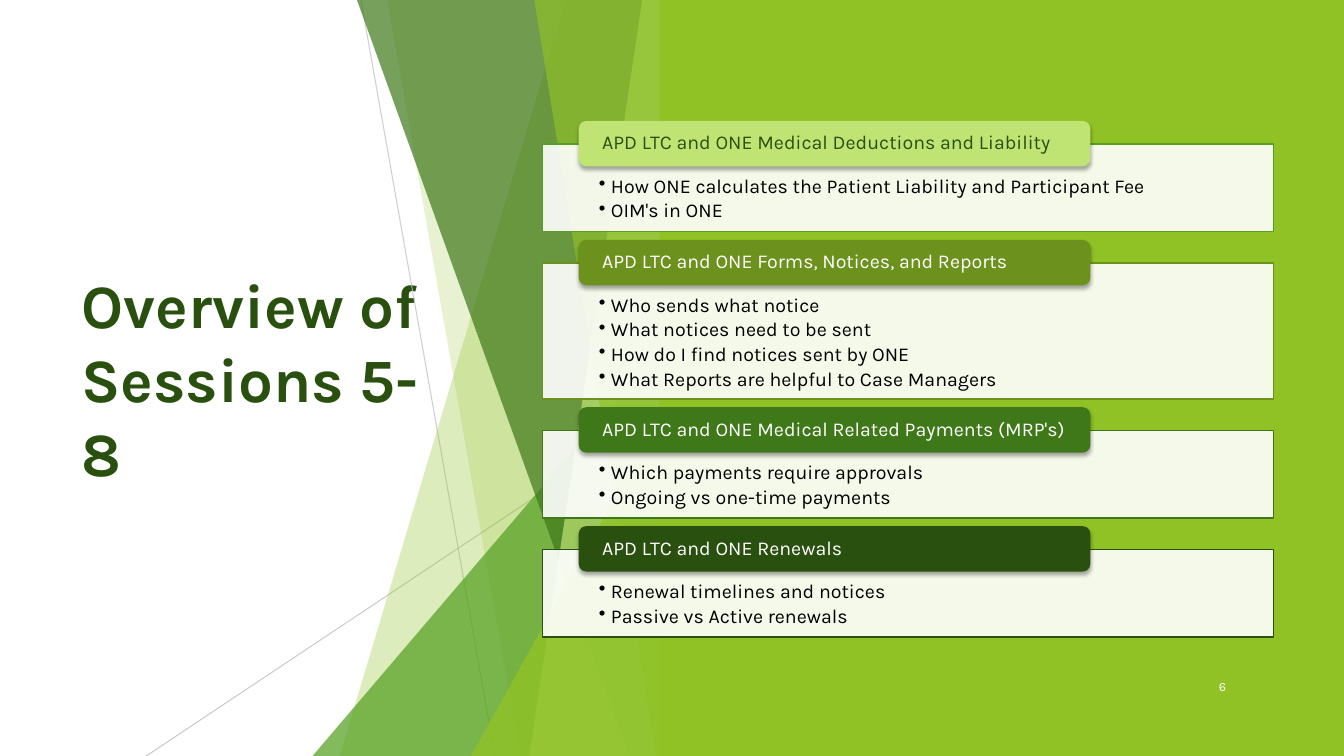
from lxml import etree
from pptx import Presentation
from pptx.dml.color import RGBColor
from pptx.enum.shapes import MSO_CONNECTOR, MSO_SHAPE
from pptx.enum.text import MSO_ANCHOR, PP_ALIGN
from pptx.oxml.ns import qn
from pptx.util import Inches, Pt

FONT = "Karla"
WHITE = RGBColor(0xFF, 0xFF, 0xFF)
BLACK = RGBColor(0x00, 0x00, 0x00)
GRAY = RGBColor(0xBF, 0xBF, 0xBF)
LIME = RGBColor(0x90, 0xC2, 0x26)
PALE_LIME = RGBColor(0xC0, 0xE4, 0x74)
OLIVE = RGBColor(0x6C, 0x92, 0x1D)
GREEN = RGBColor(0x54, 0xA0, 0x21)
FOREST = RGBColor(0x3F, 0x78, 0x19)
DARK_GREEN = RGBColor(0x2A, 0x50, 0x10)

SESSIONS = [
    ("APD LTC and ONE Medical Deductions and Liability", PALE_LIME, GREEN, DARK_GREEN,
     ["How ONE calculates the Patient Liability and Participant Fee", "OIM's in ONE"]),
    ("APD LTC and ONE Forms, Notices, and Reports", OLIVE, OLIVE, WHITE,
     ["Who sends what notice", "What notices need to be sent",
      "How do I find notices sent by ONE", "What Reports are helpful to Case Managers"]),
    ("APD LTC and ONE Medical Related Payments (MRP's)", FOREST, FOREST, WHITE,
     ["Which payments require approvals", "Ongoing vs one-time payments"]),
    ("APD LTC and ONE Renewals", DARK_GREEN, DARK_GREEN, WHITE,
     ["Renewal timelines and notices", "Passive vs Active renewals"]),
]


def set_alpha(color_format, percent):
    color = color_format._xFill.find(".//" + qn("a:srgbClr"))
    etree.SubElement(color, qn("a:alpha"), val=str(percent * 1000))


def paint(shape, color, opacity=100, line_color=None):
    shape.shadow.inherit = False
    shape.fill.solid()
    shape.fill.fore_color.rgb = color
    if opacity < 100:
        set_alpha(shape.fill.fore_color, opacity)
    if line_color is None:
        shape.line.fill.background()
    else:
        shape.line.color.rgb = line_color
        shape.line.width = Pt(1)


def add_soft_shadow(shape):
    effects = shape._element.spPr.find(qn("a:effectLst"))
    shadow = etree.SubElement(effects, qn("a:outerShdw"), blurRad=str(Pt(3)),
                              dist=str(Pt(2)), dir="5400000", rotWithShape="0")
    color = etree.SubElement(shadow, qn("a:srgbClr"), val="000000")
    etree.SubElement(color, qn("a:alpha"), val="35000")


def set_insets(text_frame, left, top, right, bottom):
    text_frame.margin_left, text_frame.margin_top = Inches(left), Inches(top)
    text_frame.margin_right, text_frame.margin_bottom = Inches(right), Inches(bottom)


def format_runs(paragraph, size, color, bold=False):
    for run in paragraph.runs:
        run.font.name = FONT
        run.font.size = Pt(size)
        run.font.bold = bold
        run.font.color.rgb = color


def add_bullet(paragraph):
    properties = paragraph._p.get_or_add_pPr()
    properties.set("marL", str(Inches(0.12)))
    properties.set("indent", str(Inches(-0.12)))
    etree.SubElement(properties, qn("a:buChar"), char="•")


def add_label(slide, left, top, width, height, text, size, color, bold=False,
              alignment=PP_ALIGN.LEFT):
    text_frame = slide.shapes.add_textbox(
        Inches(left), Inches(top), Inches(width), Inches(height)).text_frame
    text_frame.word_wrap = True
    text_frame.vertical_anchor = MSO_ANCHOR.MIDDLE
    text_frame.text = text
    paragraph = text_frame.paragraphs[0]
    paragraph.alignment = alignment
    format_runs(paragraph, size, color, bold)


def add_facets(slide, left, top, width, height):
    right, bottom = left + width, top + height

    def add_hairline(start_x, start_y, end_x, opacity):
        line = slide.shapes.add_connector(
            MSO_CONNECTOR.STRAIGHT, Inches(left + start_x), Inches(top + start_y),
            Inches(left + end_x), Inches(bottom))
        line.line.color.rgb = GRAY
        line.line.width = Pt(0.75)
        set_alpha(line.line.fill.fore_color, opacity)
        etree.SubElement(line._element.spPr, qn("a:effectLst"))

    def add_band(top_x, bottom_x, color, opacity):
        corners = [(left + top_x, top), (right, top), (right, bottom), (left + bottom_x, bottom)]
        points = [(Inches(x), Inches(y)) for x, y in corners]
        builder = slide.shapes.build_freeform(*points[0], scale=1.0)
        builder.add_line_segments(points[1:], close=True)
        paint(builder.convert_to_shape(), color, opacity)

    def add_corner(corner_width, corner_height, color, opacity):
        triangle = slide.shapes.add_shape(
            MSO_SHAPE.ISOSCELES_TRIANGLE, Inches(right - corner_width),
            Inches(bottom - corner_height), Inches(corner_width), Inches(corner_height))
        triangle.adjustments[0] = 1
        paint(triangle, color, opacity)

    add_hairline(2.13, 0, 3.46, 75)
    add_hairline(5.21, 4.03, 0, 80)
    add_band(4.16, 1.92, LIME, 30)
    add_band(2.39, 3.71, LIME, 20)
    add_corner(3.56, 4.17, GREEN, 72)
    add_band(2.09, 4.79, FOREST, 70)
    add_band(4.92, 3.8, PALE_LIME, 70)
    add_band(3.85, 5.06, LIME, 65)
    add_corner(1.99, 3.57, LIME, 80)


def add_session(slide, left, top, width, height, session):
    heading, tab_color, border_color, heading_color, topics = session
    panel = slide.shapes.add_shape(
        MSO_SHAPE.RECTANGLE, Inches(left), Inches(top), Inches(width), Inches(height))
    paint(panel, WHITE, 90, border_color)
    text_frame = panel.text_frame
    text_frame.word_wrap = True
    text_frame.vertical_anchor = MSO_ANCHOR.TOP
    set_insets(text_frame, 0.56, 0.32, 0.56, 0.11)
    text_frame.text = "\n".join(topics)
    for paragraph in text_frame.paragraphs:
        paragraph.alignment = PP_ALIGN.LEFT
        paragraph.line_spacing = 0.9
        paragraph.space_after = Pt(2.5)
        add_bullet(paragraph)
        format_runs(paragraph, 14, BLACK)

    tab = slide.shapes.add_shape(
        MSO_SHAPE.ROUNDED_RECTANGLE, Inches(left + 0.36), Inches(top - 0.23),
        Inches(width * 0.7), Inches(0.45))
    paint(tab, tab_color)
    add_soft_shadow(tab)
    tab.text_frame.word_wrap = True
    tab.text_frame.vertical_anchor = MSO_ANCHOR.MIDDLE
    set_insets(tab.text_frame, 0.21, 0, 0.21, 0)
    tab.text_frame.text = heading
    paragraph = tab.text_frame.paragraphs[0]
    paragraph.alignment = PP_ALIGN.LEFT
    paragraph.line_spacing = 0.9
    format_runs(paragraph, 14, heading_color)


def add_session_list(slide, left, top, width):
    for session in SESSIONS:
        height = 0.39 + 0.24 * len(session[-1])
        add_session(slide, left, top, width, height, session)
        top += height + 0.31


def main():
    presentation = Presentation()
    presentation.slide_width = Inches(13.33)
    presentation.slide_height = Inches(7.5)
    slide = presentation.slides.add_slide(presentation.slide_layouts[6])
    add_label(slide, 0.71, 1.51, 3.88, 4.48, "Overview of Sessions 5-8", 44, DARK_GREEN, bold=True)
    add_facets(slide, 1.45, 0, 5.21, 7.5)
    backdrop = slide.shapes.add_shape(
        MSO_SHAPE.RECTANGLE, Inches(6.54), 0, Inches(6.79), Inches(7.5))
    paint(backdrop, LIME)
    add_label(slide, 11.51, 6.61, 0.75, 0.4, "6", 9, WHITE, alignment=PP_ALIGN.RIGHT)
    add_session_list(slide, 5.38, 1.43, 7.25)
    presentation.save("out.pptx")


if __name__ == "__main__":
    main()
